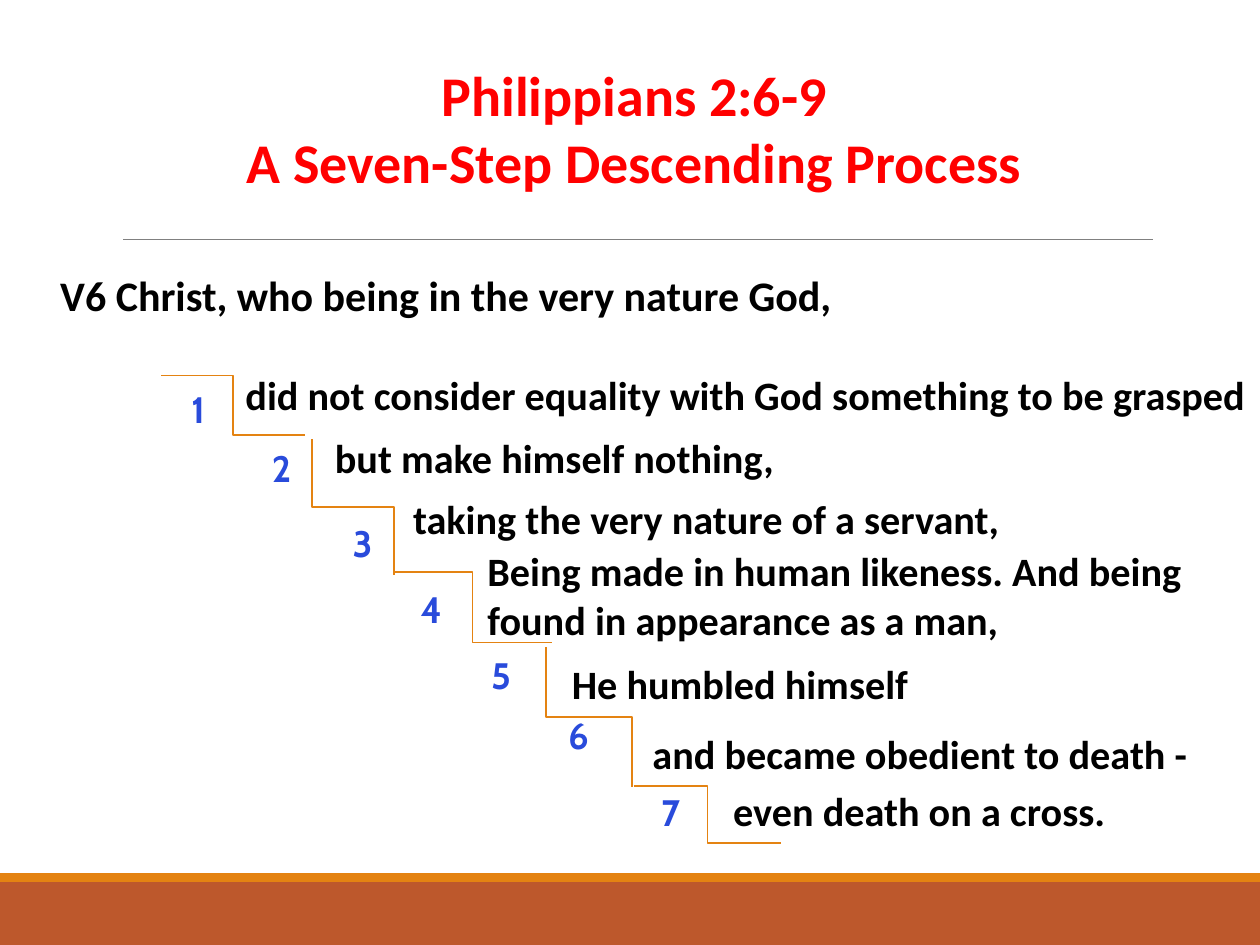
"""Build a slide of the seven descending steps in Philippians 2:6-9."""
from lxml import etree
from pptx import Presentation
from pptx import util as u
from pptx.dml.color import RGBColor
from pptx.enum import shapes, text
from pptx.oxml import ns

PX = 9144
ORANGE, RUST, GRAY = "E48312", "BD582C", "808080"
RED, BLUE, BLACK = "FF0000", "294BDB", "000000"


def color(hex_string):
    return RGBColor.from_string(hex_string)


def write(holder, lines, size, font, hex_string, align=text.PP_ALIGN.LEFT):
    frame = holder.text_frame
    frame.word_wrap = True
    frame.auto_size = text.MSO_AUTO_SIZE.SHAPE_TO_FIT_TEXT
    for index, line in enumerate(lines):
        paragraph = frame.add_paragraph() if index else frame.paragraphs[0]
        paragraph.alignment = align
        run = paragraph.add_run()
        run.text = line
        run.font.size = u.Pt(size)
        run.font.name = font
        run.font.bold = True
        run.font.color.rgb = color(hex_string)


deck = Presentation()
deck.slide_width, deck.slide_height = 1000 * PX, 750 * PX
slide = deck.slides.add_slide(deck.slide_layouts[5])

for top, height, fill in [(700, 50, RUST), (693, 7, ORANGE)]:
    band = slide.shapes.add_shape(
        shapes.MSO_SHAPE.RECTANGLE, 0, top * PX, 1000 * PX, height * PX)
    band.shadow.inherit = False
    band.fill.solid()
    band.fill.fore_color.rgb = color(fill)
    band.line.fill.background()

title = slide.shapes.title
title.left, title.top, title.width, title.height = 19 * PX, 42 * PX, 969 * PX, 118 * PX
write(title, ["Philippians 2:6-9", "A Seven-Step Descending Process"],
      32, "Calibri", RED, text.PP_ALIGN.CENTER)

STRAIGHT, ELBOW = shapes.MSO_CONNECTOR.STRAIGHT, shapes.MSO_CONNECTOR.ELBOW
lines = [
    (STRAIGHT, 98, 190, 915, 190, GRAY, 0.5, False),
    (ELBOW, 128, 298, 242, 345, ORANGE, 1, False),
    (ELBOW, 334, 370, 226, 435, ORANGE, 1, True),
    (ELBOW, 312, 454, 438, 510, ORANGE, 1, False),
    (ELBOW, 523, 535, 412, 603, ORANGE, 1, True),
    (ELBOW, 503, 624, 620, 669, ORANGE, 1, False),
]
for kind, x1, y1, x2, y2, stroke, weight, turned in lines:
    stair = slide.shapes.add_connector(kind, x1 * PX, y1 * PX, x2 * PX, y2 * PX)
    stair.line.color.rgb = color(stroke)
    stair.line.width = u.Pt(weight)
    properties = stair._element.spPr
    etree.SubElement(properties, ns.qn("a:effectLst"))
    if turned:
        properties.find(ns.qn("a:xfrm")).set("rot", str(270 * 60000))

numbers = [(142, 302), (206, 349), (270, 408), (324, 461),
           (380, 513), (441, 561), (515, 622)]
for number, (left, top) in enumerate(numbers, 1):
    label = slide.shapes.add_textbox(left * PX, top * PX, 42 * PX, 45 * PX)
    write(label, [str(number)], 21, "Cabin", BLUE)

phrases = [
    (38, 209, 643, 50, 24, "V6 Christ, who being in the very nature God,"),
    (185, 289, 830, 49, 23, "did not consider equality with God something to be grasped"),
    (256, 339, 524, 49, 23, "but make himself nothing,"),
    (318, 387, 514, 49, 23, "taking the very nature of a servant,"),
    (377, 429, 588, 88, 23,
     "Being made in human likeness. And being found in appearance as a man,"),
    (444, 518, 401, 49, 23, "He humbled himself"),
    (508, 574, 468, 49, 23, "and became obedient to death -"),
    (572, 619, 360, 49, 23, "even death on a cross."),
]
for left, top, width, height, size, words in phrases:
    phrase = slide.shapes.add_textbox(left * PX, top * PX, width * PX, height * PX)
    write(phrase, [words], size, "Calibri", BLACK)

deck.save("out.pptx")
